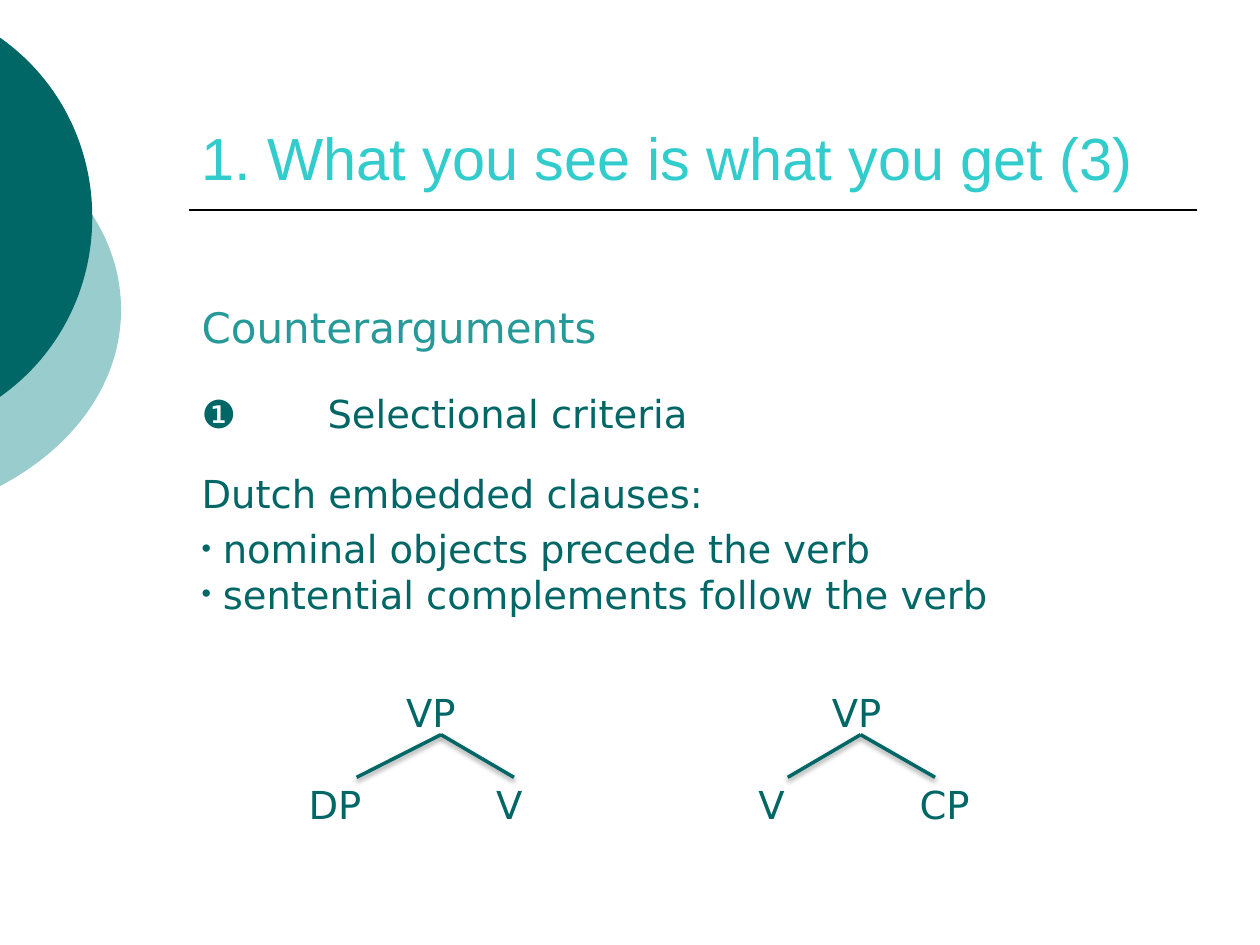
from lxml.etree import SubElement
from pptx import Presentation
from pptx.dml.color import RGBColor
from pptx.enum.text import MSO_ANCHOR as Anchor, MSO_AUTO_SIZE as AutoSize, PP_ALIGN as Align
from pptx.oxml.ns import qn
from pptx.util import Cm, Pt

# Content (lengths in cm, spacing in points)
TITLE = "1. What you see is what you get (3)"
BODY = [
    ("Counterarguments", dict(size="heading", color="heading", before=5)),
    ("❶\tSelectional criteria", dict(before=27, tab=2.54)),
    ("Dutch embedded clauses:", dict(before=24.5)),
    ("nominal objects precede the verb", dict(before=10.5, bullet=True)),
    ("sentential complements follow the verb", dict(before=5, bullet=True)),
]
# Label offsets count from the first leaf; branches run from apex to ends
TREES = [
    dict(box=(5.72, 5.92), inset=0.5, root="VP", root_indent=1.97,
         leaves=("DP", "V"), leaf_tab=3.78, apex=8.89, ends=(10.36, 7.19)),
    dict(box=(15.04, 5.72), inset=0.25, root="VP", root_indent=1.48,
         leaves=("V", "CP"), leaf_tab=3.25, apex=17.35, ends=(18.85, 15.88)),
]
# Circle segments cut by the left edge
SEGMENTS = [
    dict(frame=(-8.99, 1.91, 11.43, 8.69), top=2.69, bottom=9.8, bulge=2.44, color_name="pale"),
    dict(frame=(-6.73, 0, 8.59, 8.76), top=0.76, bottom=8.0, bulge=1.86, color_name="dark"),
]

THEME = dict(
    colors=dict(title="33CCCC", heading="269999", dark="006666", pale="99CCCC", rule="000000"),
    sizes=dict(title=34, heading=24, text=22),
    fonts=dict(title="Arial", text="DejaVu Sans"),
)
LEFT, WIDTH = 3.81, 20.32
RULE_Y, TREE_TOP, TREE_HEIGHT, APEX_Y, BRANCH_Y = 4.24, 13.77, 3.07, 14.81, 15.67


def rgb(name):
    return RGBColor.from_string(THEME["colors"][name])


def add_text(tf, text, size="text", color="dark", font="text", before=0,
             spacing=1.0, indent=0, tab=None, bullet=False):
    """Write one paragraph, using the empty first one if there is one."""
    p = tf.paragraphs[0]
    if p.runs:
        p = tf.add_paragraph()
    p.alignment = Align.LEFT
    p.line_spacing, p.space_before, p.space_after = spacing, Pt(before), Pt(0)
    r = p.add_run()
    r.text = text
    r.font.size = Pt(THEME["sizes"][size])
    r.font.name = THEME["fonts"][font]
    r.font.color.rgb = rgb(color)
    pPr = p._p.get_or_add_pPr()
    hanging = Cm(0.43) if bullet else 0
    pPr.set("marL", str(Cm(indent) + hanging))
    pPr.set("indent", str(-hanging))
    if tab:
        pPr.set("defTabSz", str(Cm(tab)))
    if bullet:
        clr = SubElement(pPr, qn("a:buClr"))
        SubElement(clr, qn("a:srgbClr"), val=THEME["colors"]["dark"])
        SubElement(pPr, qn("a:buSzPct"), val="70000")
        SubElement(pPr, qn("a:buChar"), char="•")
    else:
        SubElement(pPr, qn("a:buNone"))


def place(sp, left, top, width, height, anchor=Anchor.TOP):
    sp.left, sp.top, sp.width, sp.height = Cm(left), Cm(top), Cm(width), Cm(height)
    tf = sp.text_frame
    tf.word_wrap, tf.auto_size, tf.vertical_anchor = True, AutoSize.NONE, anchor
    return tf


def add_line(shapes, x1, y1, x2, y2, color_name, width, shadow=False):
    cx = shapes.add_connector(1, Cm(x1), Cm(y1), Cm(x2), Cm(y2))
    cx.line.color.rgb, cx.line.width = rgb(color_name), Pt(width)
    effects = SubElement(cx._element.spPr, qn("a:effectLst"))
    if shadow:
        sh = SubElement(effects, qn("a:outerShdw"), blurRad=str(Pt(3.1)),
                        dist=str(Pt(1.6)), dir="5400000", rotWithShape="0")
        clr = SubElement(sh, qn("a:srgbClr"), val="000000")
        SubElement(clr, qn("a:alpha"), val="38000")


def add_segment(shapes, frame, top, bottom, bulge, color_name):
    """Draw a segment whose halves are mirrored cubic curves."""
    left, upper, width, height = frame
    fb = shapes.build_freeform(Cm(left), Cm(upper))
    fb.add_line_segments([(Cm(left + width), Cm(upper)),
                          (Cm(left + width), Cm(upper + height))])
    sp = fb.convert_to_shape()
    sp.shadow.inherit = False
    sp.fill.solid()
    sp.fill.fore_color.rgb = rgb(color_name)
    sp.line.fill.background()

    # Curved outline inside the frame
    half, handle = (bottom - top) / 2, 0.635 * bulge
    first = [(handle, top + 0.23 * half), (bulge, top + 0.6 * half), (bulge, top + half)]
    second = [(x, top + bottom - y) for x, y in (first[1], first[0], (0, top))]
    outline = next(sp._element.iter(qn("a:path")))
    for child in list(outline):
        outline.remove(child)
    for tag, points in (("moveTo", [(0, top)]), ("cubicBezTo", first),
                        ("cubicBezTo", second), ("close", [])):
        step = SubElement(outline, qn("a:" + tag))
        for x, y in points:
            SubElement(step, qn("a:pt"), x=str(Cm(x - left)), y=str(Cm(y - upper)))


def add_tree(shapes, box, inset, root, root_indent, leaves, leaf_tab, apex, ends):
    left, width = box
    group = shapes.add_group_shape()
    for end in ends:
        add_line(group.shapes, apex, APEX_Y, end, BRANCH_Y, "dark", 2, shadow=True)
    tf = place(shapes.add_textbox(0, 0, 0, 0), left, TREE_TOP, width, TREE_HEIGHT)
    tf.margin_left = Cm(inset)
    add_text(tf, root, indent=root_indent)
    add_text(tf, "\t".join(leaves), before=26, tab=leaf_tab)


prs = Presentation()
prs.slide_width, prs.slide_height = Cm(25.4), Cm(19.05)
s = prs.slides.add_slide(prs.slide_layouts[1])

# Decoration
for segment in SEGMENTS:
    add_segment(s.shapes, **segment)
add_line(s.shapes, LEFT, RULE_Y, LEFT + WIDTH, RULE_Y, "rule", 1)

# Title and body
tf = place(s.shapes.title, LEFT, 0.82, WIDTH, 3.18, Anchor.BOTTOM)
add_text(tf, TITLE, size="title", color="title", font="title")
tf = place(s.placeholders[1], LEFT, 6.15, WIDTH, 11.23)
for text, fmt in BODY:
    add_text(tf, text, spacing=0.8, **fmt)

# Syntax trees
for tree in TREES:
    add_tree(s.shapes, **tree)

prs.save("out.pptx")
